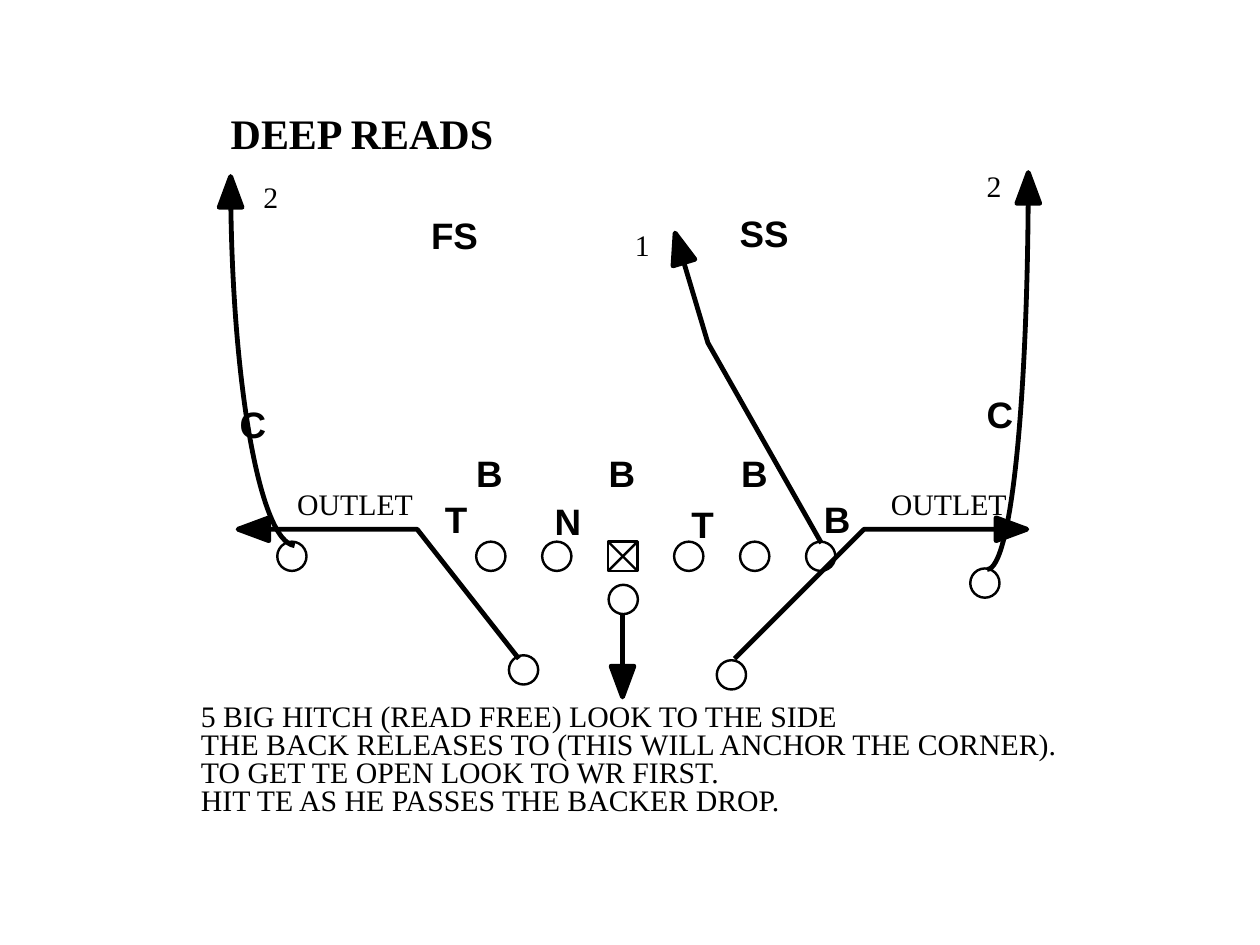
from math import hypot

from lxml.etree import SubElement
from pptx import Presentation
from pptx.dml.color import RGBColor
from pptx.enum.shapes import MSO_CONNECTOR, MSO_SHAPE
from pptx.enum.text import MSO_ANCHOR, MSO_AUTO_SIZE, PP_ALIGN
from pptx.oxml.ns import qn
from pptx.util import Cm, Pt

# All positions and sizes are in centimetres.
TITLE = "DEEP READS"
NOTES = [
    "5 BIG HITCH (READ FREE) LOOK TO THE SIDE",
    "THE BACK RELEASES TO (THIS WILL ANCHOR THE CORNER).",
    "TO GET TE OPEN LOOK TO WR FIRST.",
    "HIT TE AS HE PASSES THE BACKER DROP.",
]
READS = [
    ("1", 12.8, 4.57), ("2", 5.31, 3.61), ("2", 19.89, 3.38),
    ("OUTLET", 5.99, 9.8), ("OUTLET", 17.96, 9.8),
]
DEFENSE = [
    ("FS", 8.69, 4.29), ("SS", 14.91, 4.24),
    ("C", 4.83, 8.1), ("C", 19.89, 7.9),
    ("B", 9.6, 9.09), ("B", 12.27, 9.09), ("B", 14.94, 9.09),
    ("T", 8.97, 10.01), ("N", 11.18, 10.06),
    ("T", 13.94, 10.11), ("B", 16.61, 10.01),
]
BACKS = [(5.59, 10.92), (19.56, 11.46), (12.27, 11.79), (10.26, 13.21), (14.45, 13.31)]
LINE_X, LINE_Y, GAP, SIZE = 9.6, 10.92, 1.33, 0.59
CENTER = 2  # place of the snapper among the six on the line
ROUTES = [
    [(16.56, 10.95), (14.27, 6.91), (13.61, 4.7)],
    [(14.81, 13.28), (17.42, 10.67), (20.7, 10.67)],
    [(10.46, 13.28), (8.41, 10.67), (4.8, 10.67)],
]
CURVES = [  # start, two control points, end
    [(19.9, 11.48), (20.4, 11.48), (20.73, 7.9), (20.73, 3.48)],
    [(5.94, 11), (5.23, 10.92), (4.65, 7.62), (4.65, 3.56)],
]
DROP = [(12.55, 12.4), (12.55, 14.05)]
HEAD_LEN, HEAD_HALF = 0.62, 0.23
BLACK, WHITE = "000000", "FFFFFF"
THIN, THICK = 1.38, 2.75
SERIF, SANS = "Times New Roman", "Arial"


def color(target, code):
    target.rgb = RGBColor.from_string(code)


def place(shape, x, y, w, h):
    shape.left, shape.top, shape.width, shape.height = Cm(x), Cm(y), Cm(w), Cm(h)


def write(shape, lines, font, size, bold=False):
    frame = shape.text_frame
    frame.text = "\n".join(lines)
    frame.word_wrap = True
    frame.auto_size = MSO_AUTO_SIZE.NONE
    frame.vertical_anchor = MSO_ANCHOR.TOP
    frame.margin_left = frame.margin_right = 0
    frame.margin_top = frame.margin_bottom = 0
    for para in frame.paragraphs:
        para.alignment = PP_ALIGN.LEFT
        para.space_before = Pt(0)
        for run in para.runs:
            run.font.name, run.font.size, run.font.bold = font, Pt(size), bold
            color(run.font.color, BLACK)


def label(shapes, item, font, size, bold=False):
    text, x, y = item
    box = shapes.add_textbox(Cm(x), Cm(y), Cm(0.45 + 0.45 * len(text)), Cm(0.9))
    write(box, [text], font, size, bold)


def style(shape, width, fill=None):
    shape.shadow.inherit = False
    color(shape.line.color, BLACK)
    shape.line.width = Pt(width)
    if fill:
        shape.fill.solid()
        color(shape.fill.fore_color, fill)
    else:
        shape.fill.background()


def player(shapes, kind, x, y):
    style(shapes.add_shape(kind, Cm(x), Cm(y), Cm(SIZE), Cm(SIZE)), THIN, WHITE)


def line(shapes, start, end, width):
    link = shapes.add_connector(MSO_CONNECTOR.STRAIGHT, *map(Cm, (*start, *end)))
    color(link.line.color, BLACK)
    link.line.width = Pt(width)
    SubElement(link.element.spPr, qn("a:effectLst"))


def outline(shapes, points, close=False):
    first, *rest = [(Cm(x), Cm(y)) for x, y in points]
    pen = shapes.build_freeform(*first)
    pen.add_line_segments(rest, close=close)
    shape = pen.convert_to_shape()
    style(shape, THICK, BLACK if close else None)
    return shape


def bend(shape):
    """Turn the three segments of an outline into one Bezier curve."""
    track = next(shape.element.iter(qn("a:path")))
    curve = SubElement(track, qn("a:cubicBezTo"))
    for step in track.findall(qn("a:lnTo")):
        curve.append(step[0])
        track.remove(step)


def head(shapes, points):
    """Draw an arrowhead that points along the last leg of a route."""
    (ax, ay), (x, y) = points[-2:]
    span = hypot(x - ax, y - ay)
    dx, dy = (x - ax) / span, (y - ay) / span
    bx, by = x - HEAD_LEN * dx, y - HEAD_LEN * dy
    sides = [(bx - s * dy, by + s * dx) for s in (HEAD_HALF, -HEAD_HALF)]
    outline(shapes, [(x, y), *sides], close=True)


def main():
    deck = Presentation()
    deck.slide_width, deck.slide_height = Cm(25.4), Cm(19.05)
    slide = deck.slides.add_slide(deck.slide_layouts[1])
    shapes = slide.shapes

    place(shapes.title, 4.65, 2.16, 6, 1.02)
    write(shapes.title, [TITLE], SERIF, 24, True)
    body = slide.placeholders[1]
    place(body, 4.05, 14.22, 18.6, 2.4)
    write(body, NOTES, SERIF, 17)
    for para in body.text_frame.paragraphs:
        para.line_spacing = Pt(16)
        props = para._p.get_or_add_pPr()
        props.set("marL", "0")
        props.set("indent", "0")
        SubElement(props, qn("a:buNone"))

    for item in READS:
        label(shapes, item, SERIF, 17)
    for item in DEFENSE:
        label(shapes, item, SANS, 21, True)

    for i in range(6):
        kind = MSO_SHAPE.RECTANGLE if i == CENTER else MSO_SHAPE.OVAL
        player(shapes, kind, LINE_X + i * GAP, LINE_Y)
    left, low = LINE_X + CENTER * GAP, LINE_Y + SIZE
    line(shapes, (left, LINE_Y), (left + SIZE, low), THIN)
    line(shapes, (left, low), (left + SIZE, LINE_Y), THIN)
    for x, y in BACKS:
        player(shapes, MSO_SHAPE.OVAL, x, y)

    for route in ROUTES:
        outline(shapes, route)
    for curve in CURVES:
        bend(outline(shapes, curve))
    line(shapes, *DROP, THICK)
    for path in [*ROUTES, *CURVES, DROP]:
        head(shapes, path)

    deck.save("out.pptx")


if __name__ == "__main__":
    main()
